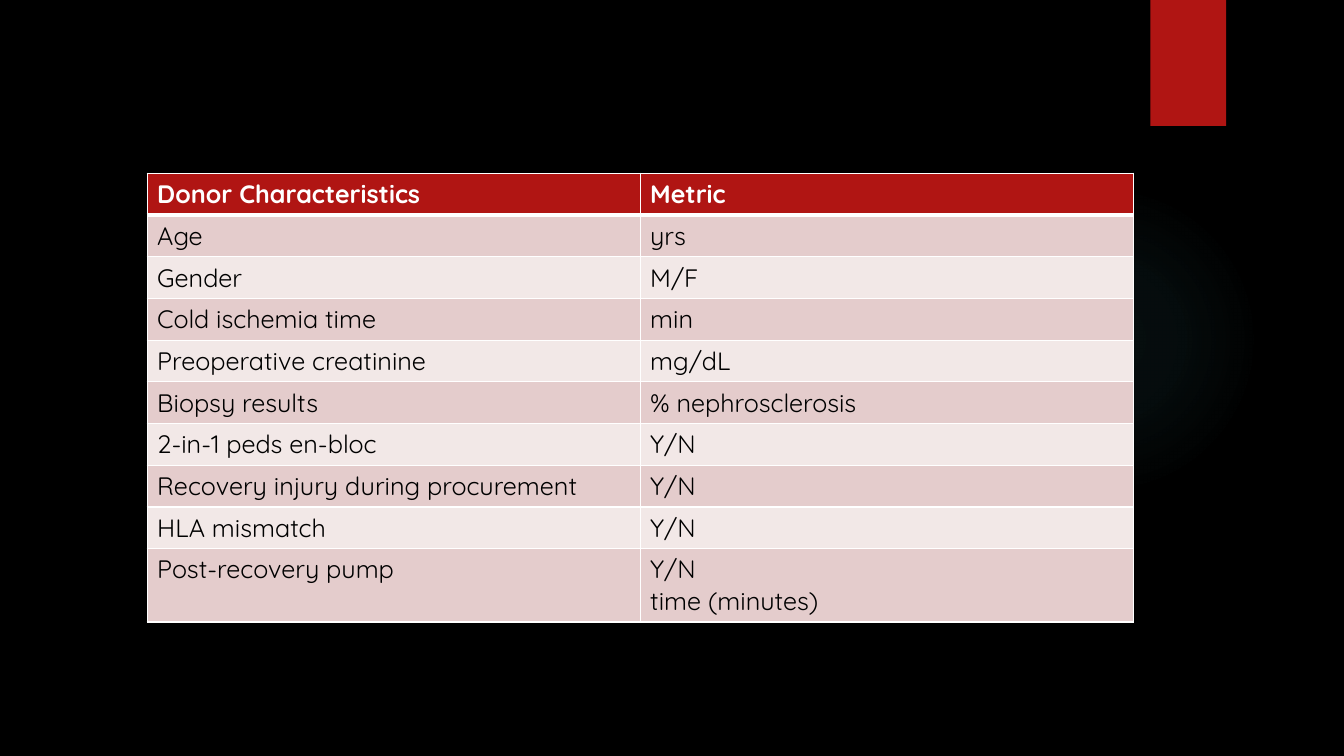
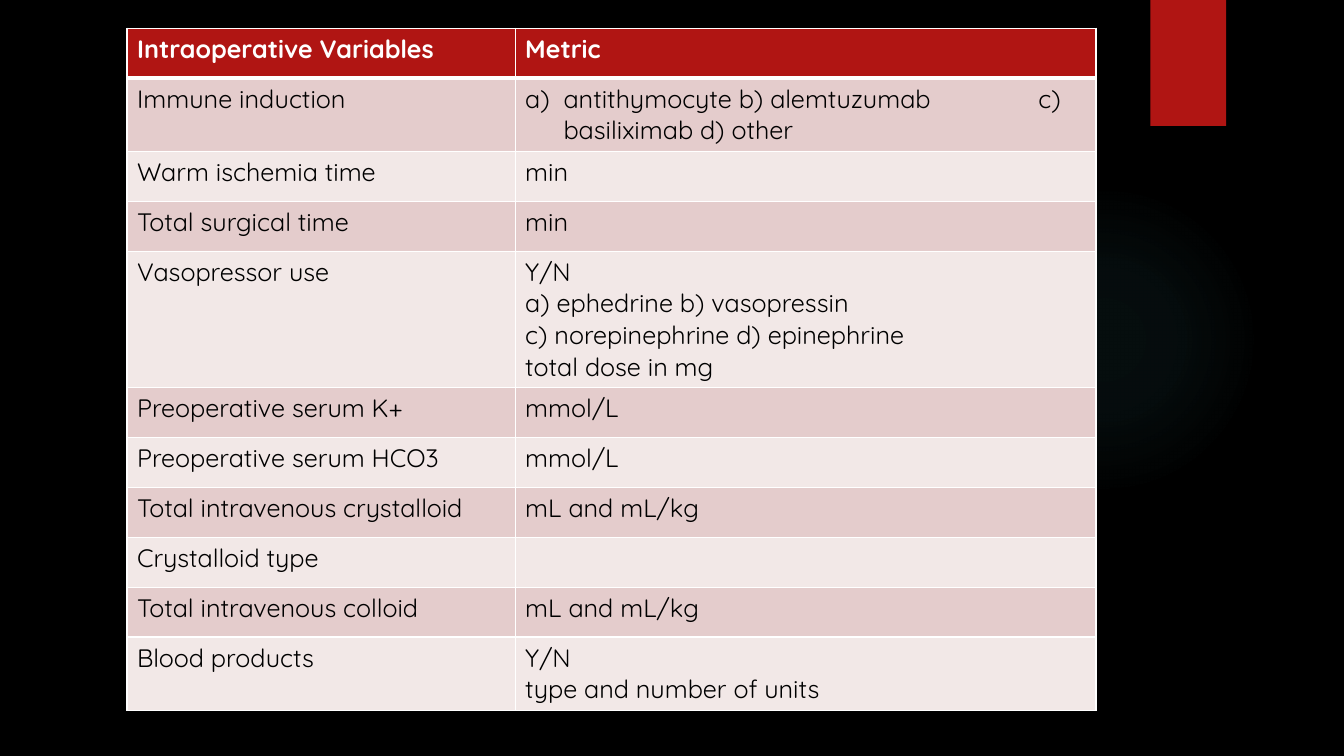
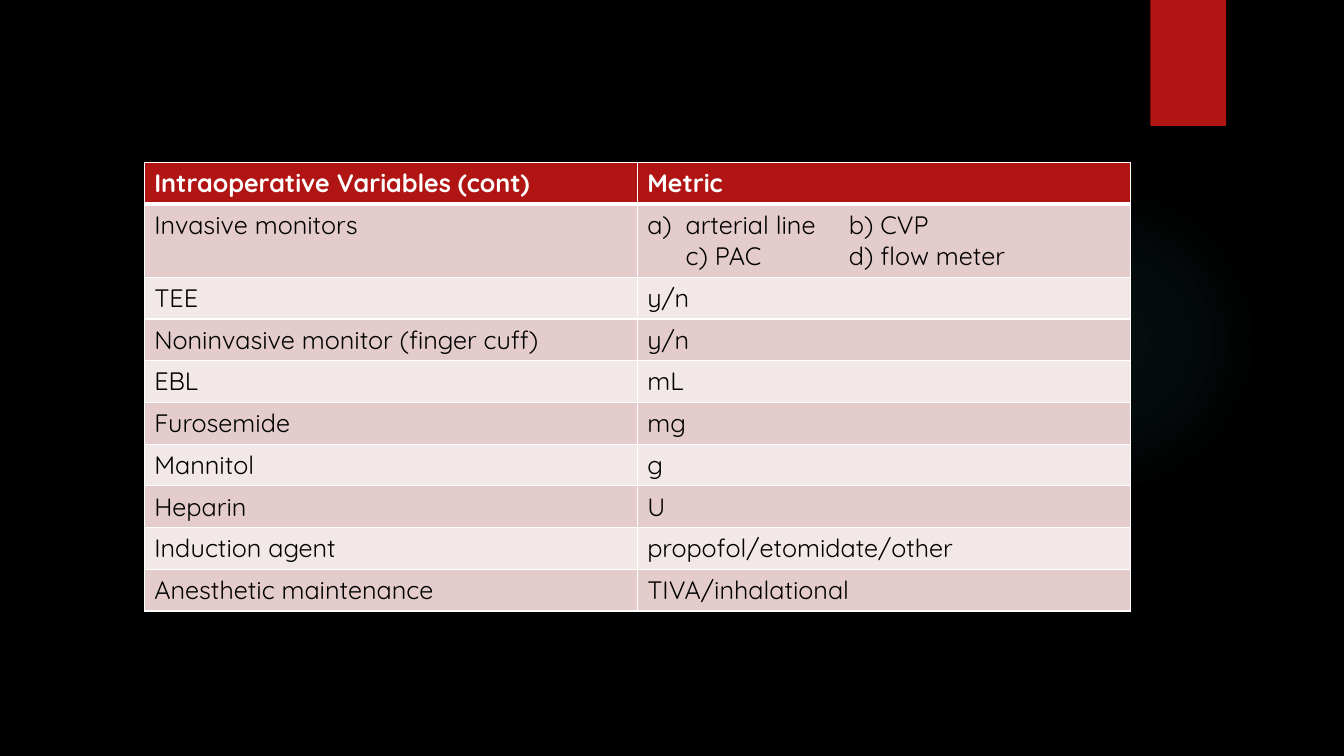
from dataclasses import dataclass

from lxml import etree
from pptx import Presentation
from pptx import util as u
from pptx.dml.color import RGBColor
from pptx.enum import shapes
from pptx.oxml import ns


@dataclass(frozen=True)
class Theme:
    font: str = "Quicksand"
    size: float = 18
    background: str = "000000"
    accent: str = "B01513"
    glow: str = "50B9C1"
    light: str = "FFFFFF"
    dark: str = "000000"
    bands: tuple = ("E4CCCC", "F2E8E7")
    thin: float = 1
    thick: float = 3


theme = Theme()
A = ns.nsdecls("a")

deck = Presentation()
deck.slide_width, deck.slide_height = u.Inches(13.33), u.Inches(7.5)
column, row = deck.slide_width / 100, deck.slide_height / 100
line_height, cell_margin = 4.17, 1.33  # in grid rows
list_indent = u.Inches(0.38)


def add_xml(parent, markup):
    """Append a piece of DrawingML to an element."""
    parent.append(etree.fromstring(markup))


def write_text(cell, text, color, bold=False, tab_stop=None):
    """Fill a cell; a tab stop makes the text an indented, lettered list."""
    cell.text_frame.text = text
    for para in cell.text_frame.paragraphs:
        if tab_stop:
            properties = para._p.get_or_add_pPr()
            properties.set("marL", str(list_indent))
            properties.set("indent", str(-list_indent))
            add_xml(properties, f'<a:buAutoNum {A} type="alphaLcParenR"/>')
            add_xml(properties, f'<a:tabLst {A}><a:tab pos="{u.Inches(tab_stop)}" algn="l"/></a:tabLst>')
        for span in para.runs:
            span.font.name = theme.font
            span.font.size = u.Pt(theme.size)
            span.font.bold = bold
            span.font.color.rgb = RGBColor.from_string(color)


# Tables: place and column widths in grid columns, top and row height in grid rows
tables = [
    dict(left=10.95, top=22.93, widths=(36.68, 36.68), height=5.5, rows=[
        ("Donor Characteristics", "Metric"),
        ("Age", "yrs"),
        ("Gender", "M/F"),
        ("Cold ischemia time", "min"),
        ("Preoperative creatinine", "mg/dL"),
        ("Biopsy results", "% nephrosclerosis"),
        ("2-in-1 peds en-bloc", "Y/N"),
        ("Recovery injury during procurement", "Y/N"),
        ("HLA mismatch", "Y/N"),
        ("Post-recovery pump", "Y/N\ntime (minutes)"),
    ]),
    dict(left=9.45, top=3.73, widths=(28.88, 43.21), height=6.6, tab_stop=5.09, rows=[
        ("Intraoperative Variables", "Metric"),
        ("Immune induction", "antithymocyte b) alemtuzumab\tc)\vbasiliximab d) other"),
        ("Warm ischemia time", "min"),
        ("Total surgical time", "min"),
        ("Vasopressor use", "Y/N\na) ephedrine b) vasopressin\n"
                            "c) norepinephrine d) epinephrine\ntotal dose in mg"),
        ("Preoperative serum K+", "mmol/L"),
        ("Preoperative serum HCO3", "mmol/L"),
        ("Total intravenous crystalloid", "mL and mL/kg"),
        ("Crystalloid type", ""),
        ("Total intravenous colloid", "mL and mL/kg"),
        ("Blood products", "Y/N\ntype and number of units"),
    ]),
    dict(left=10.73, top=21.47, widths=(36.68, 36.68), height=5.5, tab_stop=2, rows=[
        ("Intraoperative Variables (cont)", "Metric"),
        ("Invasive monitors", "arterial line\tb) CVP\vc) PAC\td) flow meter"),
        ("TEE", "y/n"),
        ("Noninvasive monitor (finger cuff)", "y/n"),
        ("EBL", "mL"),
        ("Furosemide", "mg"),
        ("Mannitol", "g"),
        ("Heparin", "U"),
        ("Induction agent", "propofol/etomidate/other"),
        ("Anesthetic maintenance", "TIVA/inhalational"),
    ]),
]

blank = deck.slide_layouts.get_by_name("Blank")
pages = [deck.slides.add_slide(blank) for _ in tables]

# Master: black background, soft glow and red tab
master = deck.slide_master
master.background.fill.solid()
master.background.fill.fore_color.rgb = RGBColor.from_string(theme.background)

drawing = pages[0].shapes
glow = drawing.add_shape(shapes.MSO_SHAPE.OVAL, int(70.59 * column), int(24.4 * row),
                         int(23.1 * column), int(23.1 * column))
red_tab = drawing.add_shape(shapes.MSO_SHAPE.RECTANGLE, int(85.6 * column), 0,
                            int(5.63 * column), int(16.67 * row))
for decoration in (glow, red_tab):
    decoration.shadow.inherit = False
    decoration.line.fill.background()
    master.element.cSld.spTree.append(decoration.element)

stops = "".join(
    f'<a:gs pos="{place * 1000}"><a:srgbClr val="{theme.glow}"><a:alpha val="{alpha * 1000}"/></a:srgbClr></a:gs>'
    for place, alpha in ((0, 7), (36, 6), (69, 0)))
glow.element.spPr.find(ns.qn("a:prstGeom")).addnext(etree.fromstring(
    f'<a:gradFill {A}><a:gsLst>{stops}</a:gsLst><a:path path="circle">'
    '<a:fillToRect l="50000" t="50000" r="50000" b="50000"/></a:path></a:gradFill>'))

red_tab.fill.solid()
red_tab.fill.fore_color.rgb = RGBColor.from_string(theme.accent)
add_xml(red_tab.element.spPr.find(ns.qn("a:effectLst")),
        f'<a:outerShdw {A} blurRad="{u.Pt(3)}" dist="{u.Pt(2)}" dir="5400000">'
        '<a:srgbClr val="000000"><a:alpha val="45000"/></a:srgbClr></a:outerShdw>')

# One table on each page
for page, content in zip(pages, tables):
    rows, widths = content["rows"], content["widths"]
    heights = []
    for texts in rows:
        lines = max(len(text.splitlines()) for text in texts)
        heights.append(max(content["height"], lines * line_height + cell_margin))
    table = page.shapes.add_table(
        len(rows), len(widths), int(content["left"] * column), int(content["top"] * row),
        int(sum(widths) * column), int(sum(heights) * row)).table
    for index, width in enumerate(widths):
        table.columns[index].width = int(width * column)

    for r, texts in enumerate(rows):
        table.rows[r].height = int(heights[r] * row)
        header = r == 0
        fill = theme.accent if header else theme.bands[(r - 1) % 2]
        edges = dict(L=theme.thin, R=theme.thin,
                     T=theme.thick if r == 1 else theme.thin,
                     B=theme.thick if header else theme.thin)
        for c, text in enumerate(texts):
            cell = table.cell(r, c)
            write_text(cell, text, theme.light if header else theme.dark, bold=header,
                       tab_stop=content["tab_stop"] if "\t" in text else None)
            for side, weight in edges.items():
                add_xml(cell._tc.get_or_add_tcPr(),
                        f'<a:ln{side} {A} w="{u.Pt(weight)}"><a:solidFill>'
                        f'<a:srgbClr val="{theme.light}"/></a:solidFill></a:ln{side}>')
            cell.fill.solid()
            cell.fill.fore_color.rgb = RGBColor.from_string(fill)

deck.save("out.pptx")
